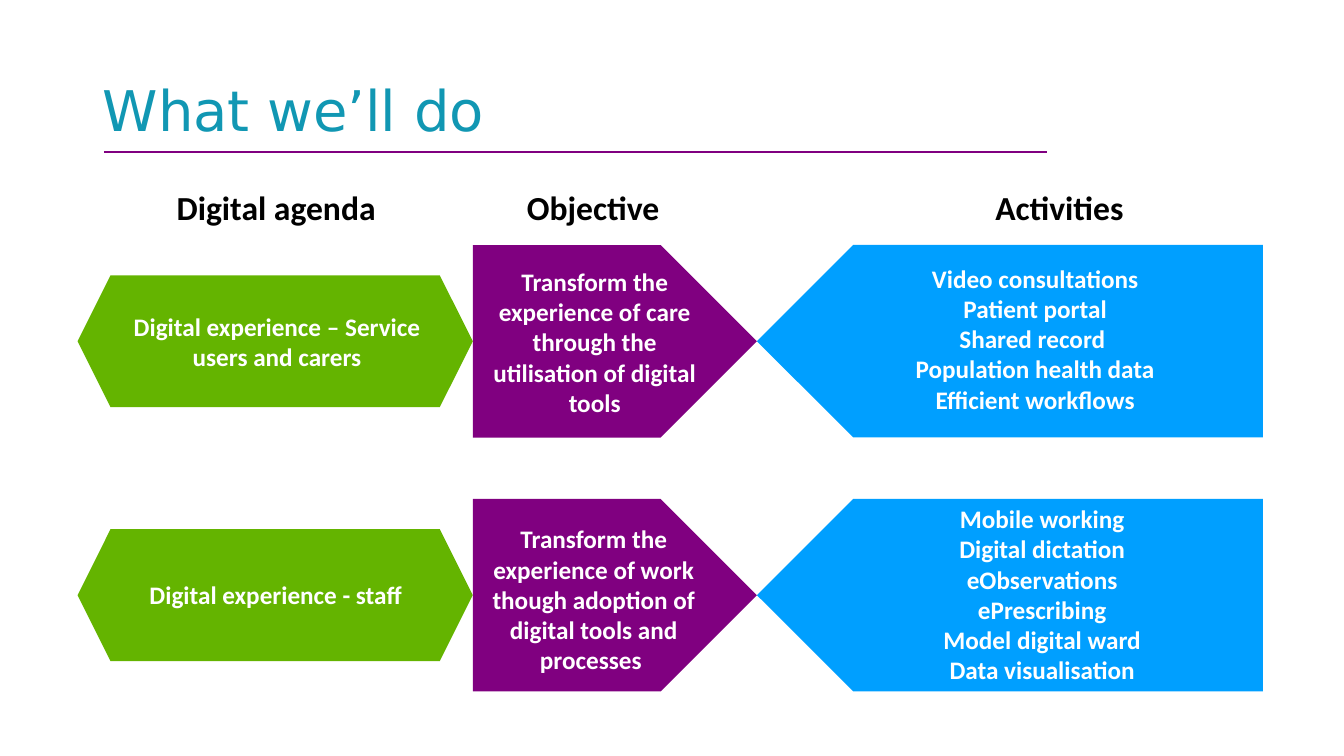
from pptx import Presentation
from pptx.dml.color import RGBColor
from pptx.enum.shapes import MSO_CONNECTOR, MSO_SHAPE
from pptx.enum.text import MSO_ANCHOR, PP_ALIGN
from pptx.oxml.ns import qn
from pptx.util import Pt
from lxml import etree

HEX, PLATE = MSO_SHAPE.HEXAGON, MSO_SHAPE.PENTAGON
STRAIGHT = MSO_CONNECTOR.STRAIGHT
TOP, MIDDLE = MSO_ANCHOR.TOP, MSO_ANCHOR.MIDDLE
LEFT, CENTER = PP_ALIGN.LEFT, PP_ALIGN.CENTER
GREEN, PURPLE, BLUE = "64B400", "800080", "009FFF"
TEAL, WHITE, BLACK = "1197B3", "FFFFFF", "000000"
ROW_TOP, ROW_STEP, ROW_HIGH = 175, 181.4, 137.5

HEADS = [
    ("Digital agenda", 78.5, 237.6),
    ("Objective", 337.7, 172),
    ("Activities", 611.3, 290.9),
]
ROWS = [
    [
        (["Digital experience – Service users and carers"],
         (80.6, 196.6, 234.7, 95)),
        (["Transform the experience of care through the utilisation "
          "of digital tools"], (339.8, 175, 170, 138.2)),
        (["Video consultations", "Patient portal", "Shared record ",
          "Population health data", "Efficient workflows"],
         (565.2, 165.6, 348.5, 152.6)),
    ],
    [
        (["Digital experience - staff"], (78.5, 377.3, 236.9, 95)),
        (["Transform the experience of work though adoption of "
          "digital tools and processes "], (338.4, 341.3, 171.4, 173.5)),
        (["Mobile working", "Digital dictation", "eObservations",
          "ePrescribing", "Model digital ward", "Data visualisation"],
         (570.2, 337.7, 348.5, 173.5)),
    ],
]


def color(code):
    """Turn a hex string into a colour."""
    return RGBColor.from_string(code)


def write(frame, lines, size=18, font="Calibri", ink=WHITE, bold=True,
          align=CENTER, anchor=MIDDLE, space=None):
    """Fill a text frame with one formatted paragraph per line."""
    frame.word_wrap = True
    frame.vertical_anchor = anchor
    for i, line in enumerate(lines):
        para = frame.add_paragraph() if i else frame.paragraphs[0]
        para.text = line
        para.alignment = align
        para.line_spacing = space
        para.font.size = Pt(size)
        para.font.name = font
        para.font.bold = bold
        para.font.color.rgb = color(ink)


def place(item, box):
    """Set left, top, width and height in points."""
    item.left, item.top, item.width, item.height = map(Pt, box)


def label(slide, lines, box, **form):
    """Add a text box."""
    item = slide.shapes.add_textbox(*map(Pt, box))
    write(item.text_frame, lines, **form)


def block(slide, kind, box, fill, turn=0):
    """Add a plain filled shape."""
    item = slide.shapes.add_shape(kind, *map(Pt, box))
    item.shadow.inherit = False
    item.fill.solid()
    item.fill.fore_color.rgb = color(fill)
    item.line.fill.background()
    item.rotation = turn


def rule(slide, left, right, y):
    """Add the line under the title."""
    item = slide.shapes.add_connector(STRAIGHT, Pt(left), Pt(y), Pt(right), Pt(y))
    item.line.color.rgb = color(PURPLE)
    item.line.width = Pt(1.5)
    etree.SubElement(item._element.spPr, qn("a:effectLst"))


def band(slide, top):
    """Add the three linked shapes of one row."""
    block(slide, PLATE, (337.7, top, 203, ROW_HIGH), PURPLE)
    block(slide, HEX, (55.4, top + 21.6, 282.3, ROW_HIGH - 43.2), GREEN)
    block(slide, PLATE, (540.7, top, 361.4, ROW_HIGH), BLUE, turn=180)


def main():
    """Build and save the slide."""
    deck = Presentation()
    deck.slide_width, deck.slide_height = Pt(960), Pt(540)
    slide = deck.slides.add_slide(deck.slide_layouts[5])
    title = slide.shapes.title
    place(title, (66.2, 28.8, 828, 104.4))
    write(title.text_frame, ["What we’ll do"], size=40, font="DejaVu Sans",
          ink=TEAL, bold=False, align=LEFT, space=0.9)
    rule(slide, 74.2, 748.1, 108.7)
    for text, left, width in HEADS:
        label(slide, [text], (left, 130.3, width, 36), size=24, ink=BLACK,
              anchor=TOP)
    for i, row in enumerate(ROWS):
        band(slide, ROW_TOP + i * ROW_STEP)
        for lines, box in row:
            label(slide, lines, box)
    deck.save("out.pptx")


if __name__ == "__main__":
    main()
